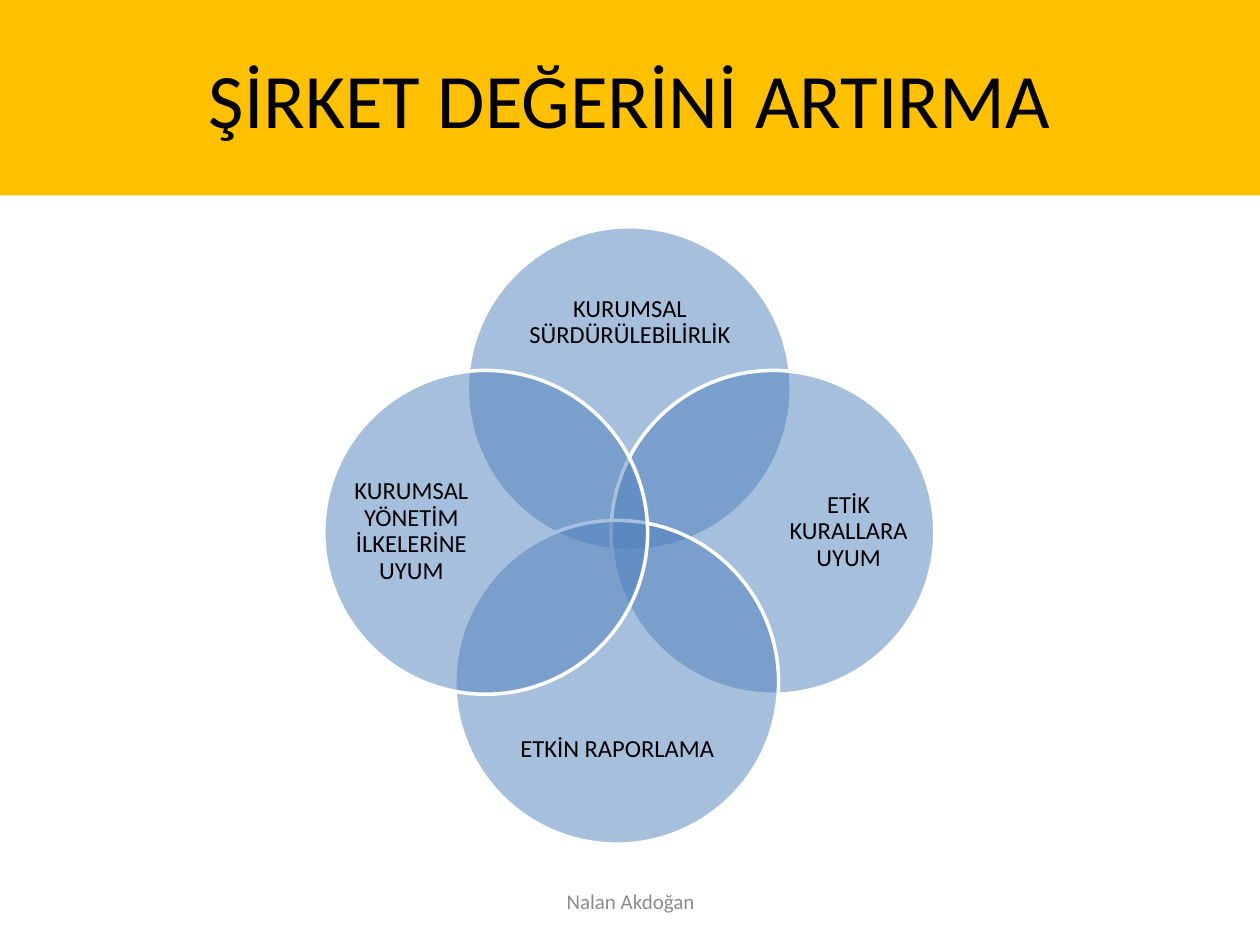
from lxml.etree import SubElement
from pptx import Presentation
from pptx.dml.color import RGBColor
from pptx.enum.shapes import MSO_SHAPE
from pptx.enum.text import MSO_ANCHOR, PP_ALIGN
from pptx.oxml.ns import qn
from pptx.util import Inches, Pt

AMBER = RGBColor(0xFF, 0xC0, 0x00)
BLUE = RGBColor(0x4F, 0x81, 0xBD)
WHITE = RGBColor(0xFF, 0xFF, 0xFF)
BLACK = RGBColor(0x00, 0x00, 0x00)
GREY = RGBColor(0x8C, 0x8C, 0x8C)

# The grid has 100 columns and 75 rows of square cells.
COLUMNS, ROWS = 100, 75
CELL = Inches(0.1)
DIAMETER = 25.7
LONG_SIDE, SHORT_WIDTH, SHORT_HEIGHT = 19.8, 9.9, 8.2
WIDE_LABEL = (LONG_SIDE, SHORT_HEIGHT)
TALL_LABEL = (SHORT_WIDTH, LONG_SIDE)

# Text, circle corner, label offset inside the circle, label size
CIRCLES = [
    ("KURUMSAL SÜRDÜRÜLEBİLİRLİK", (37.1, 18), (3, 3.5), WIDE_LABEL),
    ("ETİK KURALLARA UYUM", (48.5, 29.4), (13.9, 2.9), TALL_LABEL),
    ("ETKİN RAPORLAMA", (36.1, 41.3), (3, 14.1), WIDE_LABEL),
    ("KURUMSAL YÖNETİM İLKELERİNE UYUM", (25.7, 29.4), (2, 2.9), TALL_LABEL),
]


class SlideBuilder:
    def __init__(self, deck, font="Calibri"):
        self.page = deck.slides.add_slide(deck.slide_layouts[6])
        self.font = font

    @staticmethod
    def place(*cells):
        return [round(cell * CELL) for cell in cells]

    def set_text(self, shape, text, size, color, spacing=1.0):
        frame = shape.text_frame
        frame.text = text
        frame.word_wrap = True
        frame.vertical_anchor = MSO_ANCHOR.MIDDLE
        para = frame.paragraphs[0]
        para.alignment = PP_ALIGN.CENTER
        para.line_spacing = spacing
        font = para.runs[0].font
        font.name, font.size, font.color.rgb = self.font, Pt(size), color
        return frame

    def shape(self, kind, left, top, width, height, fill):
        shape = self.page.shapes.add_shape(kind, *self.place(left, top, width, height))
        shape.shadow.inherit = False
        shape.fill.solid()
        shape.fill.fore_color.rgb = fill
        return shape

    def banner(self, text, height):
        banner = self.shape(MSO_SHAPE.RECTANGLE, 0, 0, COLUMNS, height, AMBER)
        banner.line.fill.background()
        self.set_text(banner, text, 44, BLACK)

    def circle(self, left, top):
        """Add a half-transparent circle with a white outline."""
        circle = self.shape(MSO_SHAPE.OVAL, left, top, DIAMETER, DIAMETER, BLUE)
        circle.line.color.rgb = WHITE
        circle.line.width = Pt(2)
        color = circle.element.spPr.find(qn("a:solidFill"))[0]
        SubElement(color, qn("a:alpha"), val="50000")

    def text_box(self, text, left, top, width, height, size, color, spacing=1.0):
        box = self.page.shapes.add_textbox(*self.place(left, top, width, height))
        return self.set_text(box, text, size, color, spacing)

    def label(self, text, left, top, width, height):
        frame = self.text_box(text, left, top, width, height, 14, BLACK, 0.9)
        frame.margin_left = frame.margin_right = 0
        frame.margin_top = frame.margin_bottom = 0

    def footer(self, text):
        self.text_box(text, 34.2, 69.5, 31.7, 4, 12, GREY)


def main():
    deck = Presentation()
    deck.slide_width, deck.slide_height = COLUMNS * CELL, ROWS * CELL
    slide = SlideBuilder(deck)
    slide.banner("ŞİRKET DEĞERİNİ ARTIRMA", 15.5)
    for text, (left, top), (across, down), label_size in CIRCLES:
        slide.circle(left, top)
        slide.label(text, left + across, top + down, *label_size)
    slide.footer("Nalan Akdoğan")
    deck.save("out.pptx")


if __name__ == "__main__":
    main()
